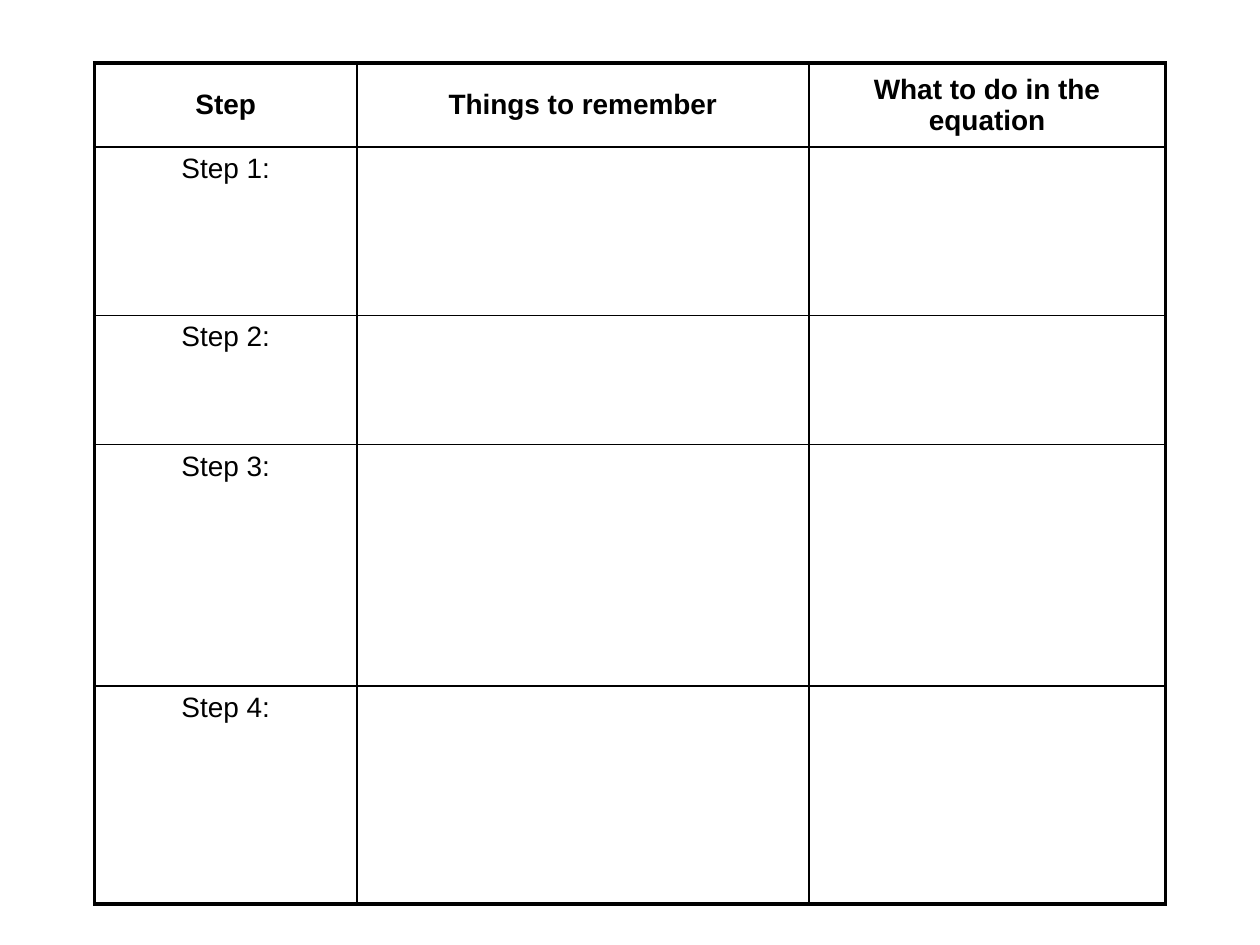
from lxml.etree import SubElement
from pptx import Presentation
from pptx.dml.color import RGBColor
from pptx.enum.text import MSO_ANCHOR, PP_ALIGN
from pptx.oxml.ns import qn
from pptx.util import Inches, Pt

BLACK = RGBColor(0, 0, 0)
HEADERS = ["Step", "Things to remember", "What to do in the equation"]
STEPS = ["Step 1:", "Step 2:", "Step 3:", "Step 4:"]
COL_SHARES = [0.245, 0.422, 0.333]
ROW_SHARES = [0.1, 0.2, 0.154, 0.287, 0.259]
THIN, THICK = Pt(1), Pt(2.25)


def set_borders(cell, widths):
    tcPr = cell._tc.get_or_add_tcPr()
    for side, width in widths.items():
        ln = SubElement(tcPr, qn(f"a:ln{side}"), w=str(width))
        fill = SubElement(ln, qn("a:solidFill"))
        SubElement(fill, qn("a:srgbClr"), val=str(BLACK))


def set_text(cell, text, bold):
    cell.vertical_anchor = MSO_ANCHOR.MIDDLE if bold else MSO_ANCHOR.TOP
    cell.text_frame.text = text
    p = cell.text_frame.paragraphs[0]
    p.alignment = PP_ALIGN.CENTER
    font = p.font
    if p.runs:
        font = p.runs[0].font
    font.name, font.size, font.bold = "Arial", Pt(16), bold
    font.color.rgb = BLACK


def add_step_table(slide, left, top, width, height):
    rows = [HEADERS] + [[step, "", ""] for step in STEPS]
    last_row, last_col = len(rows) - 1, len(HEADERS) - 1
    table = slide.shapes.add_table(
        len(rows), len(HEADERS), left, top, width, height).table
    table.horz_banding = False
    for col, share in zip(table.columns, COL_SHARES):
        col.width = int(width * share)
    for row, share in zip(table.rows, ROW_SHARES):
        row.height = int(height * share)
    for i, texts in enumerate(rows):
        for j, text in enumerate(texts):
            cell = table.cell(i, j)
            set_text(cell, text, bold=i == 0)
            set_borders(cell, {
                "L": THICK if j == 0 else THIN,
                "R": THICK if j == last_col else THIN,
                "T": THICK if i == 0 else THIN,
                "B": THICK if i == last_row else THIN,
            })
            cell.fill.background()


def main():
    prs = Presentation()
    prs.slide_width, prs.slide_height = Inches(10), Inches(7.5)
    slide = prs.slides.add_slide(prs.slide_layouts[6])
    w, h = prs.slide_width, prs.slide_height
    add_step_table(slide, int(w * 0.075), int(h / 15), int(w * 0.85), int(h * 0.89))
    prs.save("out.pptx")


if __name__ == "__main__":
    main()
